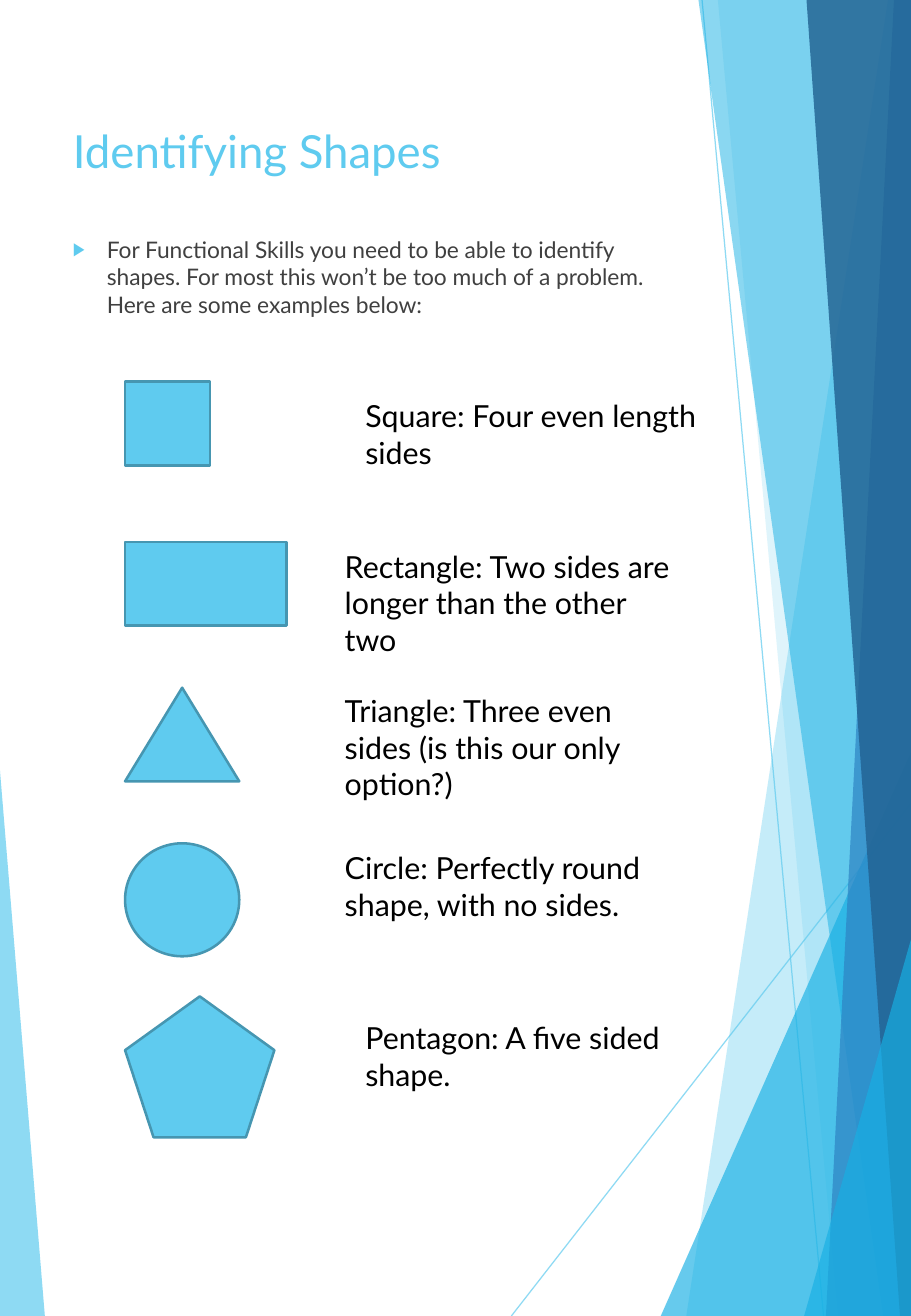
"""Build a portrait slide that names five basic shapes beside their descriptions."""
from pptx import Presentation
from pptx.dml.color import RGBColor
from pptx.enum.shapes import MSO_CONNECTOR, MSO_SHAPE
from pptx.enum.text import MSO_ANCHOR, MSO_AUTO_SIZE, PP_ALIGN
from pptx.oxml import parse_xml
from pptx.oxml.ns import nsdecls, qn
from pptx.util import Inches, Pt

WIDTH, HEIGHT = 7.5, 10.83
SKY, CYAN, OUTLINE = "5FCBEF", "17B0E4", "4696B1"


def paint(fill, colour, owner=None, opacity=100):
    fill.solid()
    fill.fore_color.rgb = RGBColor.from_string(colour)
    if opacity < 100:
        for tone in owner.element.spPr.iter(qn("a:srgbClr")):
            tone.append(parse_xml(f'<a:alpha {nsdecls("a")} val="{opacity * 1000}"/>'))


def write(frame, text, size, colour):
    frame.text = text
    frame.word_wrap = True
    frame.vertical_anchor = MSO_ANCHOR.TOP
    paragraph = frame.paragraphs[0]
    paragraph.alignment = PP_ALIGN.LEFT
    font = paragraph.runs[0].font
    font.name, font.size = "Lato", Pt(size)
    paint(font.fill, colour)
    return paragraph


deck = Presentation()
deck.slide_width, deck.slide_height = Inches(WIDTH), Inches(HEIGHT)
slide = deck.slides.add_slide(deck.slide_layouts[1])
shapes = slide.shapes
title, intro = slide.placeholders

rays = [((4.21, HEIGHT), (WIDTH, 6.61)), ((5.78, 0), (6.78, HEIGHT))]
left_facet = ([(0, 6.34), (0.37, HEIGHT), (0, HEIGHT)], SKY, 70)
right_facets = [
    ([(7.31, 0), (5.65, HEIGHT), (WIDTH, HEIGHT), (WIDTH, 0)], SKY, 36),
    ([(5.91, 0), (6.9, HEIGHT), (WIDTH, HEIGHT), (WIDTH, 0)], SKY, 20),
    ([(5.44, HEIGHT), (WIDTH, 6.19), (WIDTH, HEIGHT)], CYAN, 66),
    ([(5.75, 0), (7.27, HEIGHT), (WIDTH, HEIGHT), (WIDTH, 0)], CYAN, 50),
    ([(7.36, 0), (6.8, HEIGHT), (WIDTH, HEIGHT), (WIDTH, 0)], "2E83C3", 70),
    ([(6.64, 0), (7.41, HEIGHT), (WIDTH, HEIGHT), (WIDTH, 0)], "226292", 82),
    ([(6.62, HEIGHT), (WIDTH, 7.73), (WIDTH, HEIGHT)], CYAN, 66),
]

for start, end in rays:
    ray = shapes.add_connector(MSO_CONNECTOR.STRAIGHT, *map(Inches, start + end))
    ray.line.width = Pt(0.75)
    paint(ray.line.fill, SKY, ray, 70)
    ray.element.spPr.append(parse_xml(f'<a:effectLst {nsdecls("a")}/>'))

for corners, colour, opacity in [left_facet, *right_facets]:
    points = [(Inches(x), Inches(y)) for x, y in corners]
    outline = shapes.build_freeform(*points[0])
    outline.add_line_segments(points[1:], close=True)
    facet = outline.convert_to_shape()
    facet.shadow.inherit = False
    facet.line.fill.background()
    paint(facet.fill, colour, facet, opacity)

for holder, top, height in [(title, 0.96, 2.09), (intro, 1.89, 0.85)]:
    holder.left, holder.top = Inches(0.5), Inches(top)
    holder.width, holder.height = Inches(5.21), Inches(height)
    holder.text_frame.auto_size = MSO_AUTO_SIZE.NONE
    holder.element.getparent().append(holder.element)

write(title.text_frame, "Identifying Shapes", 27, SKY)
introduction = write(
    intro.text_frame,
    "For Functional Skills you need to be able to identify shapes. "
    "For most this won’t be too much of a problem. "
    "Here are some examples below:",
    13.5, "404040")
introduction.space_before = Pt(7.5)
bullet = introduction._p.get_or_add_pPr()
bullet.set("marL", str(Inches(0.28)))
bullet.set("indent", str(-Inches(0.28)))
for tag in (f'<a:buClr {nsdecls("a")}><a:srgbClr val="{SKY}"/></a:buClr>',
            f'<a:buSzPct {nsdecls("a")} val="80000"/>',
            f'<a:buChar {nsdecls("a")} char="▶"/>'):
    bullet.append(parse_xml(tag))

examples = [
    (MSO_SHAPE.RECTANGLE, 3.14, 0.7, 0.69,
     "Square: Four even length sides", 2.91, 3.22, 0.71),
    (MSO_SHAPE.RECTANGLE, 4.46, 1.33, 0.69,
     "Rectangle: Two sides are longer than the other two", 2.74, 4.46, 1.01),
    (MSO_SHAPE.ISOSCELES_TRIANGLE, 5.66, 0.94, 0.77,
     "Triangle: Three even sides (is this our only option?)", 2.74, 5.65, 1.01),
    (MSO_SHAPE.OVAL, 6.94, 0.94, 0.93,
     "Circle: Perfectly round shape, with no sides.", 2.74, 6.94, 0.71),
    (MSO_SHAPE.REGULAR_PENTAGON, 8.2, 1.23, 1.16,
     "Pentagon: A five sided shape.", 2.91, 8.34, 0.71),
]

for kind, top, width, height, description, text_left, text_top, text_height in examples:
    example = shapes.add_shape(
        kind, Inches(1.03), Inches(top), Inches(width), Inches(height))
    example.shadow.inherit = False
    paint(example.fill, SKY)
    paint(example.line.fill, OUTLINE)
    example.line.width = Pt(1.5)
    caption = shapes.add_textbox(
        Inches(text_left), Inches(text_top), Inches(2.97), Inches(text_height))
    write(caption.text_frame, description, 18, "000000")
    caption.text_frame.auto_size = MSO_AUTO_SIZE.SHAPE_TO_FIT_TEXT

deck.save("out.pptx")
